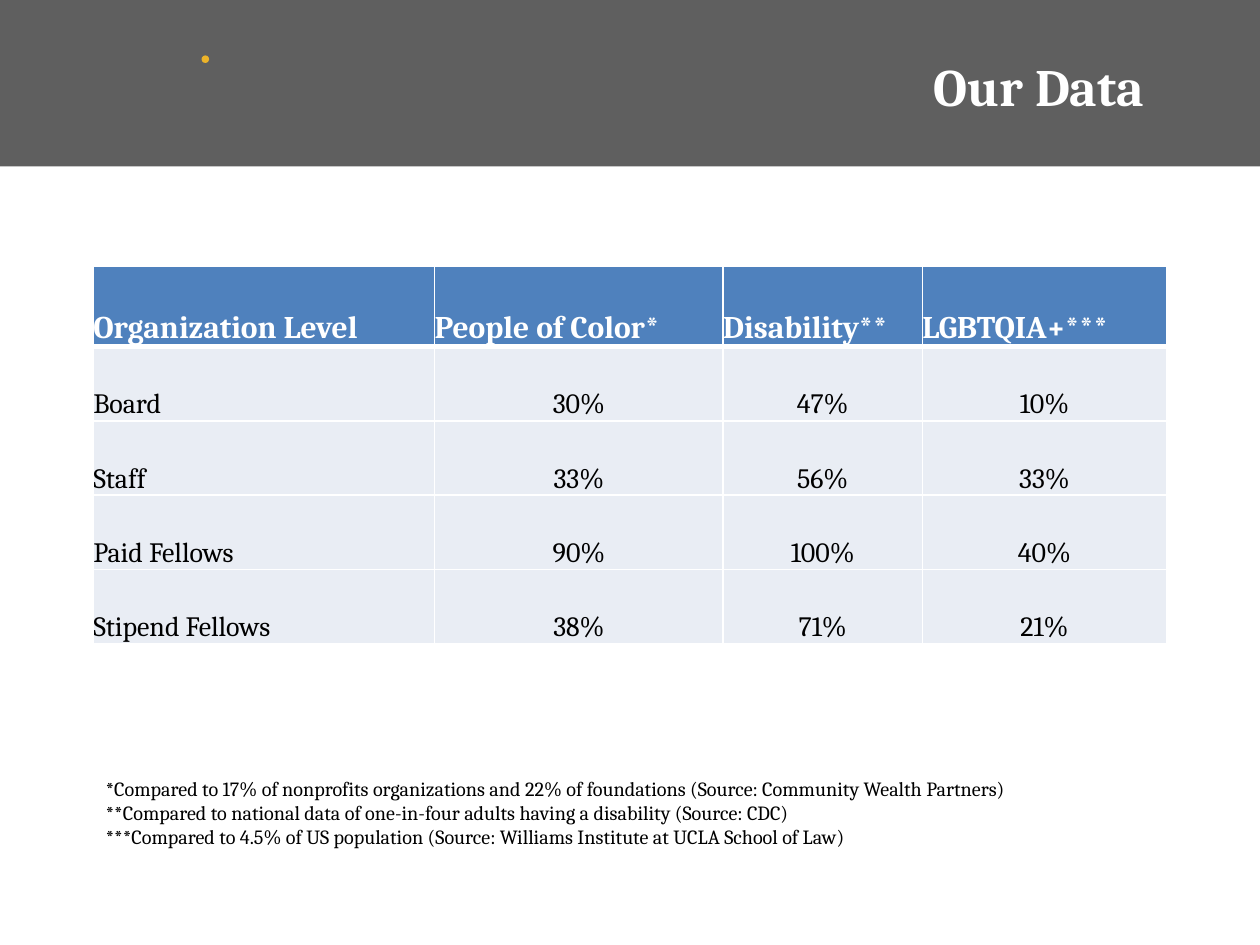
from dataclasses import dataclass

from lxml import etree
from pptx import Presentation
from pptx.dml.color import RGBColor
from pptx.enum.shapes import MSO_SHAPE
from pptx.enum.text import MSO_ANCHOR, PP_ALIGN
from pptx.oxml.ns import qn
from pptx.util import Inches, Pt

RECTANGLE, OVAL = MSO_SHAPE.RECTANGLE, MSO_SHAPE.OVAL
LEFT, CENTER, RIGHT = PP_ALIGN.LEFT, PP_ALIGN.CENTER, PP_ALIGN.RIGHT
TOP, BOTTOM = MSO_ANCHOR.TOP, MSO_ANCHOR.BOTTOM


@dataclass(frozen=True)
class Theme:
    font: str = "Cambria"
    white: str = "FFFFFF"
    black: str = "000000"
    band: str = "5F5F5F"
    dot: str = "ECB329"
    header: str = "4F81BD"
    body: str = "E9EDF4"
    title_size: float = 30
    header_size: float = 18
    body_size: float = 16
    note_size: float = 11.5


@dataclass(frozen=True)
class Area:
    left: float
    top: float
    width: float
    height: float

    def lengths(self) -> list:
        return [Inches(value) for value in (self.left, self.top, self.width, self.height)]


@dataclass(frozen=True)
class TextStyle:
    size: float
    color: str
    bold: bool = False
    align: PP_ALIGN = LEFT


THEME = Theme()
COLUMN_WIDTHS = (2.71, 2.29, 1.58, 1.94)
HEADER_HEIGHT, BODY_HEIGHT = 0.64, 0.59
TABLE_ROWS = (
    ("Organization Level", "People of Color*", "Disability**", "LGBTQIA+***"),
    ("Board", "30%", "47%", "10%"),
    ("Staff", "33%", "56%", "33%"),
    ("Paid Fellows", "90%", "100%", "40%"),
    ("Stipend Fellows", "38%", "71%", "21%"),
)
NOTES = (
    "*Compared to 17% of nonprofits organizations and 22% of foundations (Source: Community Wealth Partners)",
    "**Compared to national data of one-in-four adults having a disability (Source: CDC)",
    "***Compared to 4.5% of US population (Source: Williams Institute at UCLA School of Law)",
)


def set_values(target, values: dict) -> None:
    """Set each named attribute on the target."""
    for name, value in values.items():
        setattr(target, name, value)


def write_lines(frame, lines: tuple, style: TextStyle) -> None:
    """Write one styled paragraph for each line."""
    for index, line in enumerate(lines):
        para = frame.add_paragraph() if index else frame.paragraphs[0]
        para.alignment = style.align
        span = para.add_run()
        span.text = line
        set_values(span.font, {"name": THEME.font, "size": Pt(style.size), "bold": style.bold})
        span.font.color.rgb = RGBColor.from_string(style.color)


def add_plain_shape(page, kind: MSO_SHAPE, area: Area, color: str) -> None:
    """Add a filled shape without outline or shadow."""
    shape = page.shapes.add_shape(kind, *area.lengths())
    shape.shadow.inherit = False
    shape.fill.solid()
    shape.fill.fore_color.rgb = RGBColor.from_string(color)
    shape.line.fill.background()


def add_text(page, area: Area, lines: tuple, style: TextStyle, inset: float) -> None:
    """Add a wrapping text box with the given vertical inset."""
    frame = page.shapes.add_textbox(*area.lengths()).text_frame
    set_values(frame, {
        "word_wrap": True, "vertical_anchor": TOP,
        "margin_left": Inches(0.1), "margin_right": Inches(0.1),
        "margin_top": Inches(inset), "margin_bottom": Inches(inset),
    })
    write_lines(frame, lines, style)


def add_borders(cell, bottom_width: float) -> None:
    """Draw white borders around a cell."""
    properties = cell._tc.get_or_add_tcPr()
    for side, width in (("L", 1), ("R", 1), ("T", 1), ("B", bottom_width)):
        line = etree.SubElement(properties, qn(f"a:ln{side}"), w=str(Pt(width)))
        fill = etree.SubElement(line, qn("a:solidFill"))
        etree.SubElement(fill, qn("a:srgbClr"), val=THEME.white)


def fill_cell(cell, text: str, color: str, style: TextStyle, bottom_width: float) -> None:
    """Give a cell its text, borders and fill."""
    set_values(cell, {
        "vertical_anchor": BOTTOM, "margin_left": 0, "margin_right": 0,
        "margin_top": 0, "margin_bottom": 0,
    })
    write_lines(cell.text_frame, (text,), style)
    add_borders(cell, bottom_width)
    cell.fill.solid()
    cell.fill.fore_color.rgb = RGBColor.from_string(color)


def add_data_table(page, left: float, top: float) -> None:
    """Add the table of shares by organization level."""
    heights = [HEADER_HEIGHT] + [BODY_HEIGHT] * (len(TABLE_ROWS) - 1)
    area = Area(left, top, sum(COLUMN_WIDTHS), sum(heights))
    table = page.shapes.add_table(len(heights), len(COLUMN_WIDTHS), *area.lengths()).table
    for column, width in zip(table.columns, COLUMN_WIDTHS):
        column.width = Inches(width)
    for row, (height, texts) in enumerate(zip(heights, TABLE_ROWS)):
        table.rows[row].height = Inches(height)
        for column, text in enumerate(texts):
            cell = table.cell(row, column)
            if row == 0:
                style = TextStyle(THEME.header_size, THEME.white, bold=True)
                fill_cell(cell, text, THEME.header, style, 3)
            else:
                style = TextStyle(THEME.body_size, THEME.black, align=CENTER if column else LEFT)
                fill_cell(cell, text, THEME.body, style, 1)


def main() -> None:
    """Build and save the slide."""
    deck = Presentation()
    set_values(deck, {"slide_width": Inches(10), "slide_height": Inches(7.5)})
    page = deck.slides.add_slide(deck.slide_layouts[6])
    add_plain_shape(page, RECTANGLE, Area(0, 0, 10, 1.32), THEME.band)
    add_plain_shape(page, OVAL, Area(1.6, 0.44, 0.06, 0.06), THEME.dot)
    title_style = TextStyle(THEME.title_size, THEME.white, bold=True, align=RIGHT)
    add_text(page, Area(0.18, 0.33, 9, 0.3), ("Our Data",), title_style, 0.1)
    add_data_table(page, 0.74, 2.11)
    note_style = TextStyle(THEME.note_size, THEME.black)
    add_text(page, Area(0.74, 6.11, 8.52, 0.68), NOTES, note_style, 0.05)
    deck.save("out.pptx")


if __name__ == "__main__":
    main()
